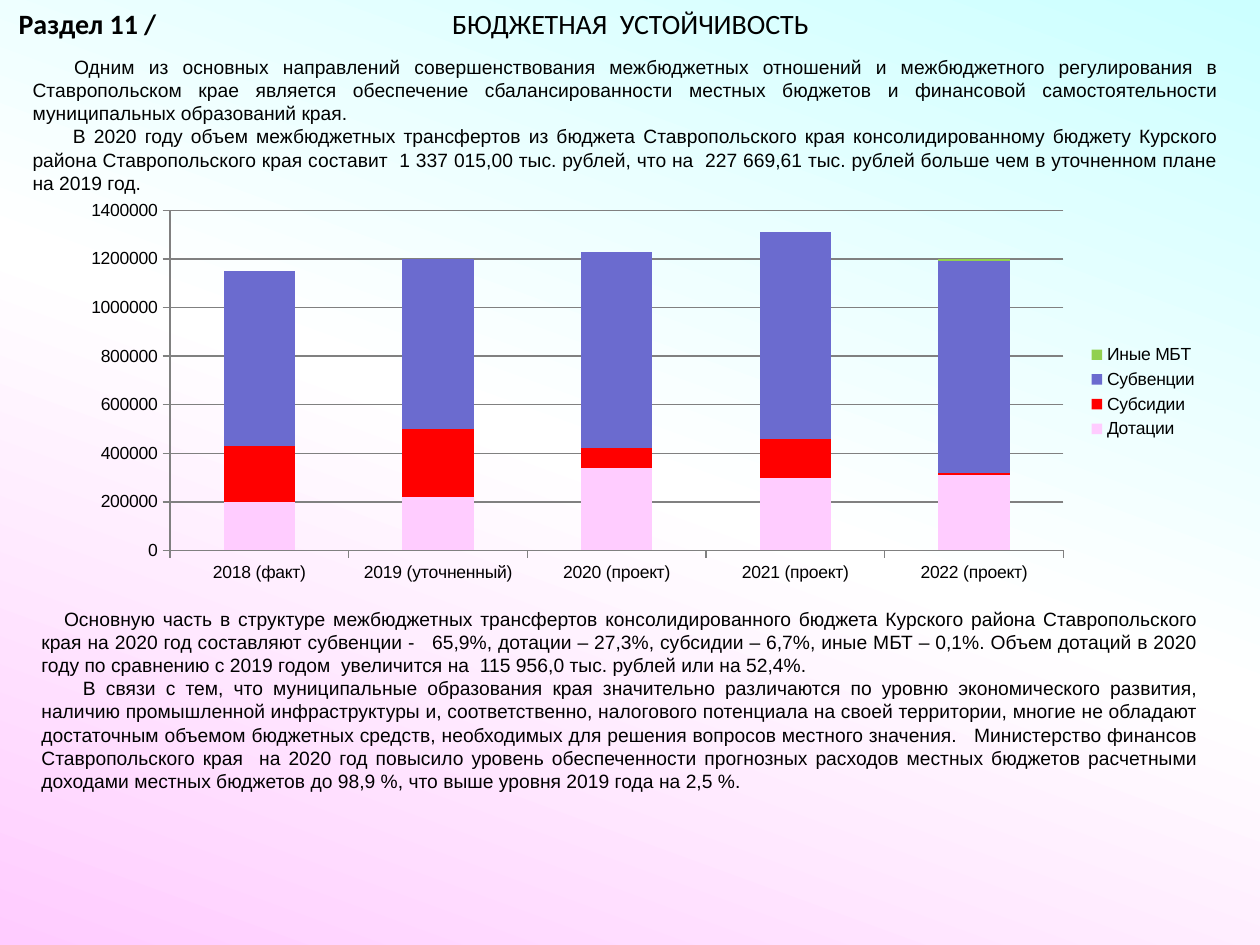
from copy import deepcopy
from dataclasses import dataclass

from lxml import etree
from pptx import Presentation
from pptx.chart.data import CategoryChartData
from pptx.dml.color import RGBColor
from pptx.enum.chart import XL_CHART_TYPE, XL_LEGEND_POSITION, XL_TICK_MARK
from pptx.enum.text import MSO_AUTO_SIZE, PP_ALIGN
from pptx.oxml.ns import qn
from pptx.util import Inches, Pt

COLORS = {
    "text": "000000", "axis": "808080",
    "cyan": "CCFFFF", "white": "FFFFFF", "pink": "FFCCFF",
    "red": "FF0000", "violet": "6B6BCF", "green": "92D050",
}


@dataclass
class Paragraph:
    text: str
    indent: float = 0


@dataclass
class Series:
    name: str
    color: str
    values: tuple[int, ...]


INTRO = [
    Paragraph(
        "Одним из основных направлений совершенствования межбюджетных отношений и "
        "межбюджетного регулирования в Ставропольском крае является обеспечение "
        "сбалансированности местных бюджетов и финансовой самостоятельности "
        "муниципальных образований края.", 0.33),
    Paragraph(
        "В 2020 году объем межбюджетных трансфертов из бюджета Ставропольского края "
        "консолидированному бюджету Курского района Ставропольского края составит  "
        "1 337 015,00 тыс. рублей, что на  227 669,61 тыс. рублей больше чем в "
        "уточненном плане на 2019 год.", 0.32),
]

CONCLUSION = [
    Paragraph(
        "Основную часть в структуре межбюджетных трансфертов консолидированного бюджета "
        "Курского района Ставропольского края на 2020 год составляют субвенции -   65,9%, "
        "дотации – 27,3%, субсидии – 6,7%, иные МБТ – 0,1%. Объем дотаций в 2020 году по "
        "сравнению с 2019 годом  увеличится на  115 956,0 тыс. рублей или на 52,4%.", 0.18),
    Paragraph(
        "В связи с тем, что муниципальные образования края значительно различаются по "
        "уровню экономического развития, наличию промышленной инфраструктуры и, "
        "соответственно, налогового потенциала на своей территории, многие не обладают "
        "достаточным объемом бюджетных средств, необходимых для решения вопросов местного "
        "значения.   Министерство финансов Ставропольского края  на 2020 год повысило "
        "уровень обеспеченности прогнозных расходов местных бюджетов расчетными доходами "
        "местных бюджетов до 98,9 %, что выше уровня 2019 года на 2,5 %.", 0.33),
]

YEARS = ["2018 (факт)", "2019 (уточненный)", "2020 (проект)",
         "2021 (проект)", "2022 (проект)"]
TRANSFERS = [
    Series("Дотации", "pink", (200000, 220000, 340000, 300000, 310000)),
    Series("Субсидии", "red", (230000, 280000, 80000, 160000, 10000)),
    Series("Субвенции", "violet", (720000, 700000, 810000, 850000, 870000)),
    Series("Иные МБТ", "green", (0, 0, 0, 0, 10000)),
]


def rgb(name: str) -> RGBColor:
    return RGBColor.from_string(COLORS[name])


def paint_background(slide, names: list[str], clockwise_angle: float) -> None:
    fill = slide.background.fill
    fill.gradient()
    fill.gradient_angle = 360 - clockwise_angle
    stop_list = slide.element.find(".//" + qn("a:gsLst"))
    while len(stop_list) < len(names):
        stop_list.append(deepcopy(stop_list[0]))
    for index, (stop, name) in enumerate(zip(fill.gradient_stops, names)):
        stop.position = index / (len(names) - 1)
        stop.color.rgb = rgb(name)


def add_text(slide, paragraphs: list[Paragraph], *, at: tuple[float, ...], size: float = 11,
             font: str = "Arial", bold: bool = False, align=PP_ALIGN.JUSTIFY) -> None:
    frame = slide.shapes.add_textbox(*map(Inches, at)).text_frame
    frame.word_wrap = True
    frame.auto_size = MSO_AUTO_SIZE.SHAPE_TO_FIT_TEXT
    for index, content in enumerate(paragraphs):
        paragraph = frame.paragraphs[0] if index == 0 else frame.add_paragraph()
        paragraph.alignment = align
        properties = paragraph._p.get_or_add_pPr()
        properties.set("marL", "0")
        properties.set("indent", str(Inches(content.indent)))
        run = paragraph.add_run()
        run.text = content.text
        run.font.size = Pt(size)
        run.font.name = font
        run.font.bold = bold
        run.font.color.rgb = rgb("text")


def place_plot(chart, chart_at: tuple[float, ...], plot_at: tuple[float, ...]) -> None:
    """Fix the inner plot area, given in slide inches."""
    left, top, width, height = chart_at
    x, y, w, h = plot_at
    plot_area = chart._chartSpace.chart.plotArea
    for old in plot_area.findall(qn("c:layout")):
        plot_area.remove(old)
    layout = etree.Element(qn("c:layout"))
    plot_area.insert(0, layout)
    manual = etree.SubElement(layout, qn("c:manualLayout"))
    settings = {"layoutTarget": "inner", "xMode": "edge", "yMode": "edge",
                "x": (x - left) / width, "y": (y - top) / height,
                "w": w / width, "h": h / height}
    for tag, value in settings.items():
        etree.SubElement(manual, qn(f"c:{tag}"), val=str(value))


def add_transfer_chart(slide, at: tuple[float, ...], plot_at: tuple[float, ...]) -> None:
    data = CategoryChartData(number_format="0")
    data.categories = YEARS
    for item in TRANSFERS:
        data.add_series(item.name, item.values)
    chart = slide.shapes.add_chart(
        XL_CHART_TYPE.COLUMN_STACKED, *map(Inches, at), data).chart
    chart.has_title = False
    chart.font.size = Pt(10)
    chart.font.name = "Arial"
    chart.font.color.rgb = rgb("text")
    place_plot(chart, at, plot_at)

    # Columns
    plot = chart.plots[0]
    plot.vary_by_categories = False
    plot.overlap = 100
    plot.gap_width = 150
    for series, item in zip(plot.series, TRANSFERS):
        series.format.fill.solid()
        series.format.fill.fore_color.rgb = rgb(item.color)

    # Axes and gridlines
    amounts = chart.value_axis
    amounts.minimum_scale, amounts.maximum_scale = 0, 1400000
    amounts.major_unit = 200000
    amounts.has_major_gridlines = True
    for axis in (chart.category_axis, amounts):
        axis.major_tick_mark = XL_TICK_MARK.OUTSIDE
        axis.format.line.color.rgb = rgb("axis")
    amounts.major_gridlines.format.line.color.rgb = rgb("axis")

    # Legend
    chart.has_legend = True
    chart.legend.position = XL_LEGEND_POSITION.RIGHT
    chart.legend.include_in_layout = False


def main() -> None:
    deck = Presentation()
    deck.slide_width, deck.slide_height = Inches(10), Inches(7.5)
    slide = deck.slides.add_slide(deck.slide_layouts[6])
    paint_background(slide, ["cyan", "white", "pink"], 110)

    # Heading: section number and title
    add_text(slide, [Paragraph("Раздел 11 /")], at=(0.05, 0, 3.4, 0.37),
             size=16, font="Calibri", bold=True, align=PP_ALIGN.LEFT)
    add_text(slide, [Paragraph("БЮДЖЕТНАЯ  УСТОЙЧИВОСТЬ")], at=(3.49, 0, 6.51, 0.37),
             size=16, font="Calibri", align=PP_ALIGN.LEFT)

    # Introduction, chart and conclusion
    add_text(slide, INTRO, at=(0.16, 0.39, 9.61, 1.21))
    add_transfer_chart(slide, (0.55, 1.53, 9.06, 3.16), (1.35, 1.67, 7.09, 2.7))
    add_text(slide, CONCLUSION, at=(0.23, 4.77, 9.38, 1.77))
    deck.save("out.pptx")


if __name__ == "__main__":
    main()
